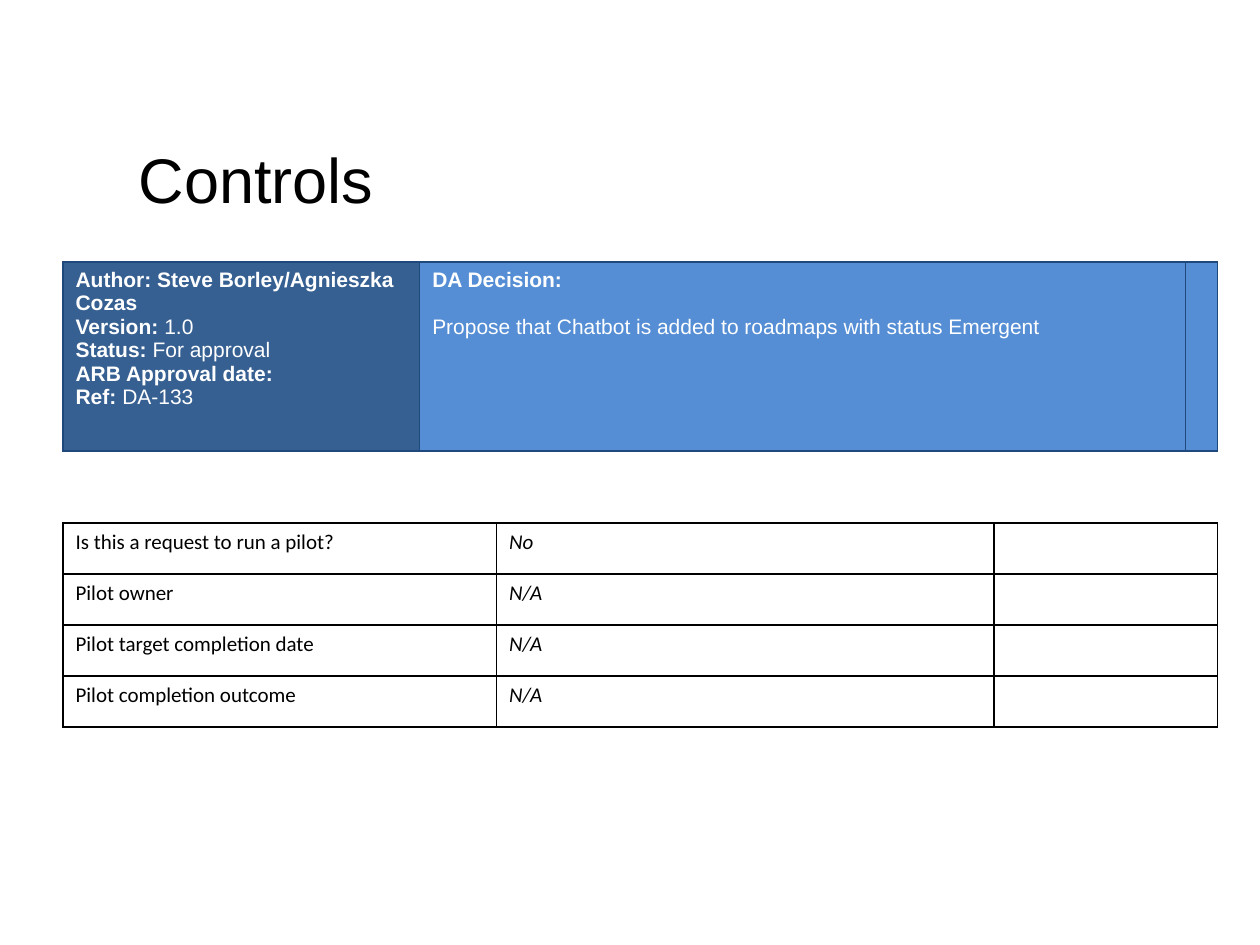
from lxml import etree
from pptx import Presentation
from pptx import util as u
from pptx.dml.color import RGBColor
from pptx.enum import text
from pptx.oxml import ns

BLACK = RGBColor(0x00, 0x00, 0x00)
WHITE = RGBColor(0xFF, 0xFF, 0xFF)
NAVY = RGBColor(0x1F, 0x49, 0x7D)
DARK = RGBColor(0x37, 0x60, 0x92)
BLUE = RGBColor(0x55, 0x8E, 0xD5)

LEFT = u.Cm(1.27)

# Label and value of each line in the author cell
FACTS = [
    ("Author: Steve Borley/Agnieszka Cozas", ""),
    ("Version: ", "1.0"),
    ("Status: ", "For approval"),
    ("ARB Approval date:", ""),
    ("Ref: ", "DA-133"),
]
DECISION = "Propose that Chatbot is added to roadmaps with status Emergent"
PILOT = [
    ("Is this a request to run a pilot?", "No"),
    ("Pilot owner", "N/A"),
    ("Pilot target completion date", "N/A"),
    ("Pilot completion outcome", "N/A"),
]


def set_font(font, name, size, color):
    font.name, font.size = name, u.Pt(size)
    font.color.rgb = color


def add_title(slide, words):
    title = slide.shapes.title
    title.left, title.top = u.Cm(2.54), u.Cm(2.72)
    title.width, title.height = u.Cm(22.86), u.Cm(1.73)
    frame = title.text_frame
    frame.text = words
    frame.vertical_anchor = text.MSO_ANCHOR.MIDDLE
    para = frame.paragraphs[0]
    para.alignment = text.PP_ALIGN.LEFT
    set_font(para.font, "Arial", 36, BLACK)


def add_border(cell, color):
    props = cell._tc.get_or_add_tcPr()
    for side in ("lnL", "lnR", "lnT", "lnB"):
        line = etree.SubElement(props, ns.qn("a:" + side), w=str(u.Pt(1)))
        fill = etree.SubElement(line, ns.qn("a:solidFill"))
        etree.SubElement(fill, ns.qn("a:srgbClr"), val=str(color))


def add_grid(slide, top, widths, height, count, edge):
    """Add a plain bordered table with equal rows."""
    frame = slide.shapes.add_table(count, len(widths), LEFT, top,
                                   sum(widths), height * count)
    table = frame.table
    table.first_row = table.horz_banding = False
    for col, width in zip(table.columns, widths):
        col.width = width
    for row in table.rows:
        row.height = height
    for cell in table.iter_cells():
        add_border(cell, edge)
        cell.fill.background()
        cell.text_frame.paragraphs[0].font.size = u.Pt(12)
    return table


def write_lines(cell, lines):
    """Write each line as a bold label and a regular value."""
    frame = cell.text_frame
    for i, line in enumerate(lines):
        para = frame.add_paragraph() if i else frame.paragraphs[0]
        set_font(para.font, "Arial", 12, WHITE)
        for words, bold in zip(line, (True, False)):
            if words:
                run = para.add_run()
                run.text = words
                run.font.bold = bold


def add_summary(slide):
    widths = [u.Cm(w) for w in (7.19, 15.44, 0.64)]
    table = add_grid(slide, u.Cm(5.28), widths, u.Cm(3.81), 1, NAVY)
    for cell, color in zip(table.iter_cells(), (DARK, BLUE, BLUE)):
        cell.fill.solid()
        cell.fill.fore_color.rgb = color
    write_lines(table.cell(0, 0), FACTS)
    choice = table.cell(0, 1)
    write_lines(choice, [("DA Decision:", ""), ("", DECISION)])
    choice.text_frame.paragraphs[1].space_before = u.Pt(13.5)


def add_pilot(slide):
    widths = [u.Cm(w) for w in (8.74, 10.03, 4.5)]
    table = add_grid(slide, u.Cm(10.54), widths, u.Cm(1.03), len(PILOT), BLACK)
    for r, pair in enumerate(PILOT):
        for c, words in enumerate(pair):
            cell = table.cell(r, c)
            cell.text = words
            font = cell.text_frame.paragraphs[0].font
            set_font(font, "Calibri", 12, BLACK)
            font.italic = c == 1


def main():
    deck = Presentation()
    deck.slide_width, deck.slide_height = u.Cm(25.4), u.Cm(19.05)
    slide = deck.slides.add_slide(deck.slide_layouts[5])
    add_title(slide, "Controls")
    add_summary(slide)
    add_pilot(slide)
    deck.save("out.pptx")


if __name__ == "__main__":
    main()
